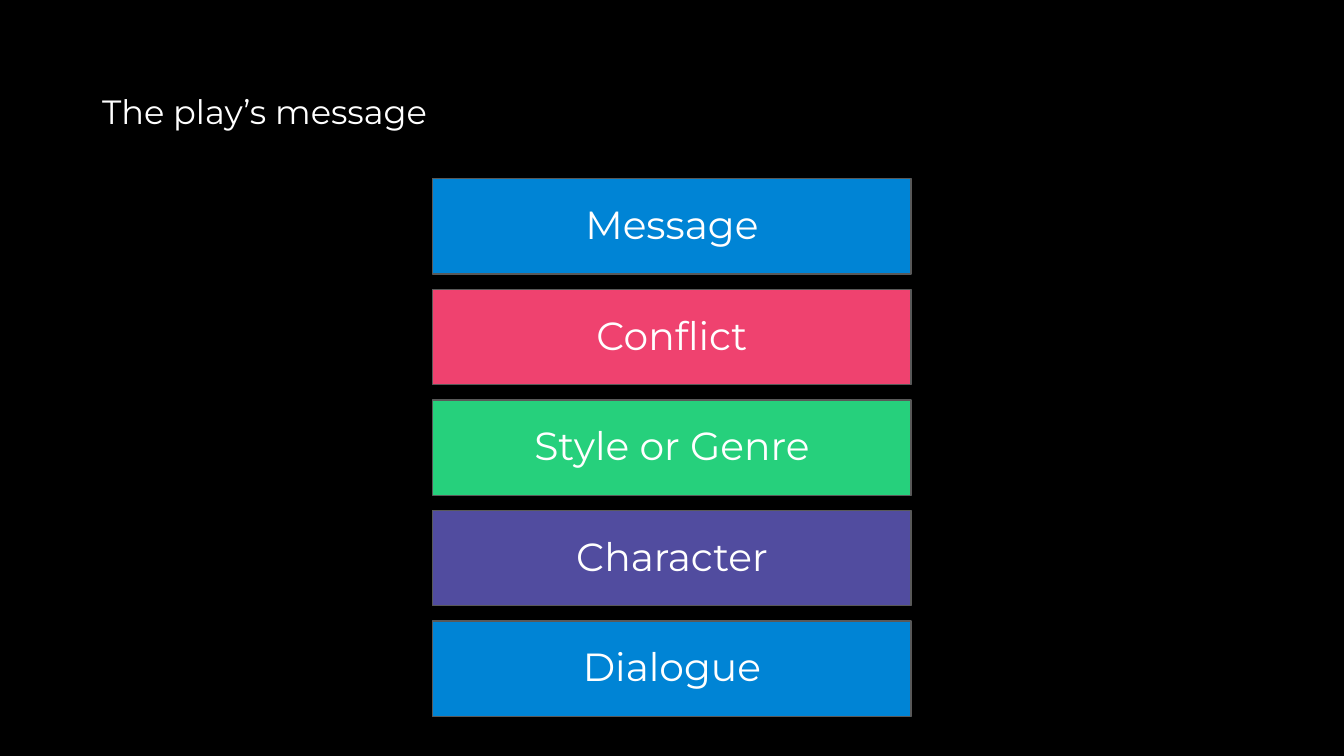
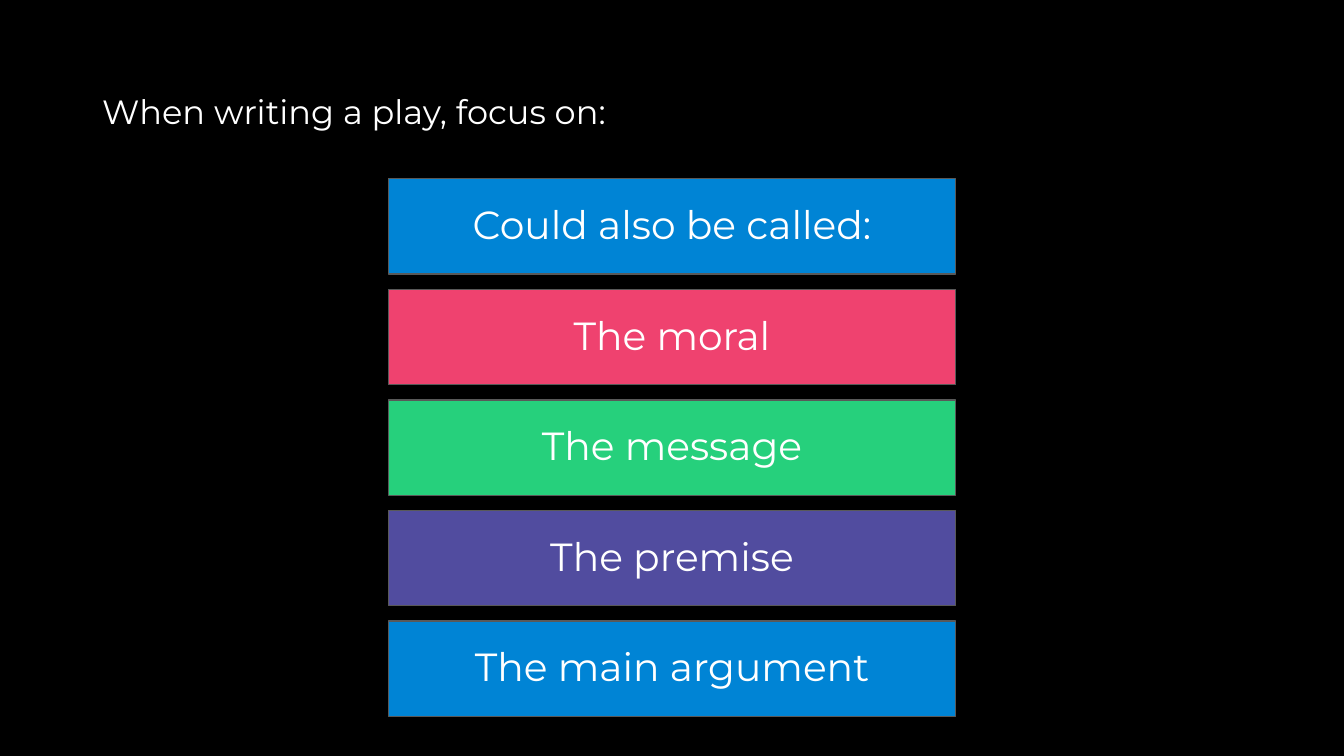
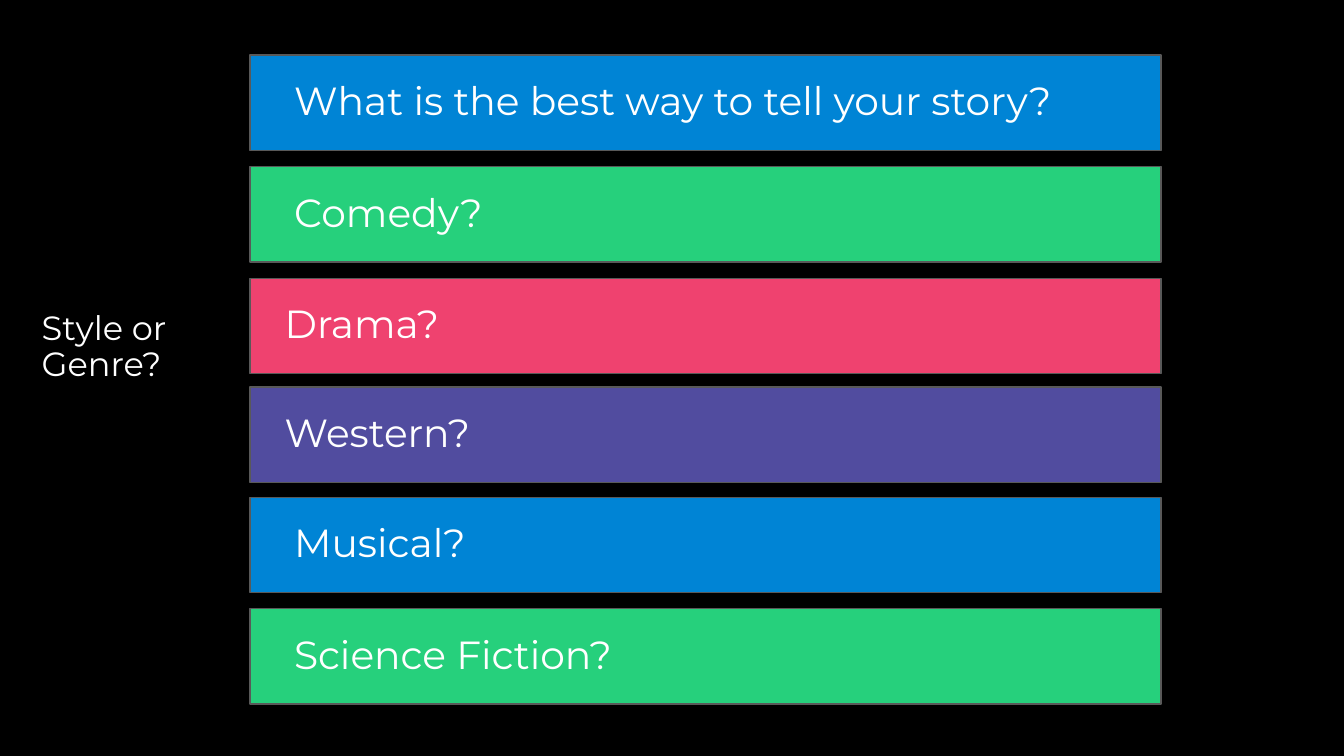
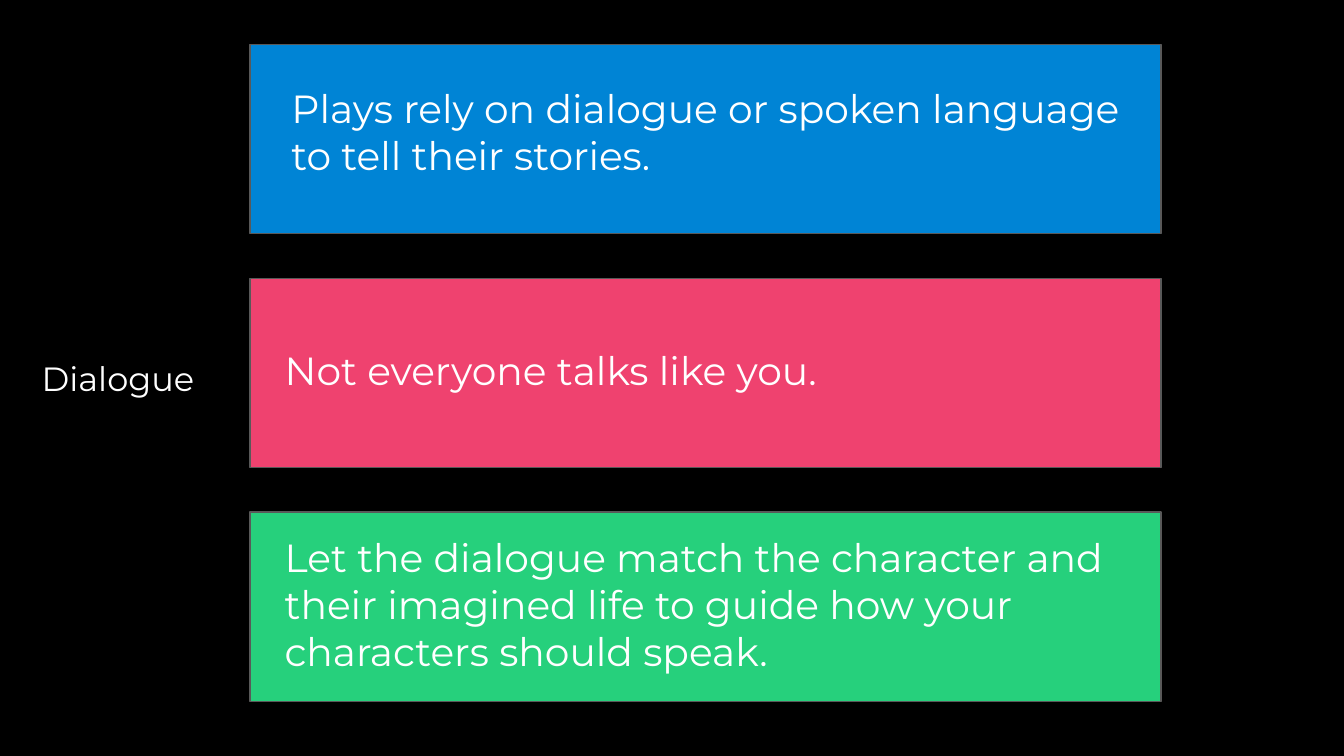
from pptx import Presentation
from pptx.dml.color import RGBColor
from pptx.enum import shapes, text
from pptx.util import Inches, Pt

BLUE, PINK, GREEN, PURPLE = "0084D5", "EF426F", "26D07C", "514C9F"
WHITE, BLACK, GRAY = "FFFFFF", "000000", "595959"
FONT = "Montserrat"
LEFT, MID = text.PP_ALIGN.LEFT, text.PP_ALIGN.CENTER
BAR_H = 0.71
DROP = 0.06  # from the top of a bar to its words

color = RGBColor.from_string


def words(slide, box, line, size=21, align=LEFT, title=False):
    """Add white text; titles sit mid-box with tight lines and slim insets."""
    area = slide.shapes.add_textbox(*map(Inches, box))
    frame = area.text_frame
    frame.word_wrap = True
    side, edge = (0.07, 0.04) if title else (0.1, 0.1)
    frame.margin_left = frame.margin_right = Inches(side)
    frame.margin_top = frame.margin_bottom = Inches(edge)
    para = frame.paragraphs[0]
    para.alignment = align
    if title:
        frame.vertical_anchor = text.MSO_ANCHOR.MIDDLE
        para.line_spacing = 0.9
    run = para.add_run()
    run.text = line
    run.font.name = FONT
    run.font.size = Pt(size)
    run.font.color.rgb = color(WHITE)


def bar(slide, box, fill):
    rect = slide.shapes.add_shape(shapes.MSO_SHAPE.RECTANGLE, *map(Inches, box))
    rect.shadow.inherit = False
    rect.fill.solid()
    rect.fill.fore_color.rgb = color(fill)
    rect.line.color.rgb = color(GRAY)
    rect.line.width = Pt(0.75)


deck = Presentation()
deck.slide_width, deck.slide_height = Inches(10), Inches(10 * 9 / 16)

wide_box = (0.69, 0.3, 8.62, 1.09)
titles = [
    ("The play’s message", wide_box),
    ("When writing a play, focus on:", wide_box),
    ("Style or Genre?", (0.24, 2.04, 1.1, 1.09)),
    ("Dialogue", (0.24, 2.29, 1.48, 1.09)),
]
pages = []
for title, box in titles:
    page = deck.slides.add_slide(deck.slide_layouts[6])
    page.background.fill.solid()
    page.background.fill.fore_color.rgb = color(BLACK)
    words(page, box, title, size=18, title=True)
    pages.append(page)

# Slides 1 and 2: centred stacks of five bars, as (words, width of words)
stacks = [
    (3.56, [("Message", 3.07), ("Conflict", 3.07), ("Style or Genre", 3.07),
            ("Character", 3.07), ("Dialogue", 3.07)]),
    (4.22, [("Could also be called:", 3.78), ("The moral", 3.07),
            ("The message", 3.07), ("The premise", 3.07),
            ("The main argument", 3.72)]),
]
fills = [BLUE, PINK, GREEN, PURPLE, BLUE]
first, last = 1.33, 4.62
for page, (width, items) in zip(pages, stacks):
    tops = [first + i * (last - first) / 4 for i in range(5)]
    for top, fill in zip(tops, fills):
        bar(page, (5 - width / 2, top, width, BAR_H), fill)
    for top, (item, span) in zip(tops, items):
        words(page, (5 - span / 2, top + DROP, span, 0.42), item, align=MID)

# Slide 3: six genre bars, as (words, fill, top of bar, left and width of words)
genres = [
    ("What is the best way to tell your story?", BLUE, 0.41, 2.09, 6.41),
    ("Comedy?", GREEN, 1.24, 2.09, 3.07),
    ("Drama?", PINK, 2.07, 2.02, 3.07),
    ("Western?", PURPLE, 2.88, 2.02, 3.07),
    ("Musical?", BLUE, 3.7, 2.09, 3.72),
    ("Science Fiction?", GREEN, 4.53, 2.09, 3.72),
]
for genre, fill, top, left, span in genres:
    bar(pages[2], (1.86, top, 6.78, BAR_H), fill)
    words(pages[2], (left, top + DROP, span, 0.42), genre)

# Slide 4: three tall bars, as (words, fill, left, drop and width of words)
tips = [
    ("Plays rely on dialogue or spoken language to tell their stories.",
     BLUE, 2.07, 0.2, 6.41),
    ("Not everyone talks like you.", PINK, 2.02, 0.41, 6.26),
    ("Let the dialogue match the character and their imagined life to guide "
     "how your characters should speak.", GREEN, 2.02, DROP, 6.47),
]
for i, (tip, fill, left, drop, span) in enumerate(tips):
    top = 0.33 + i * 1.74
    bar(pages[3], (1.86, top, 6.78, 1.41), fill)
    words(pages[3], (left, top + drop, span, 0.42), tip)

deck.save("out.pptx")
